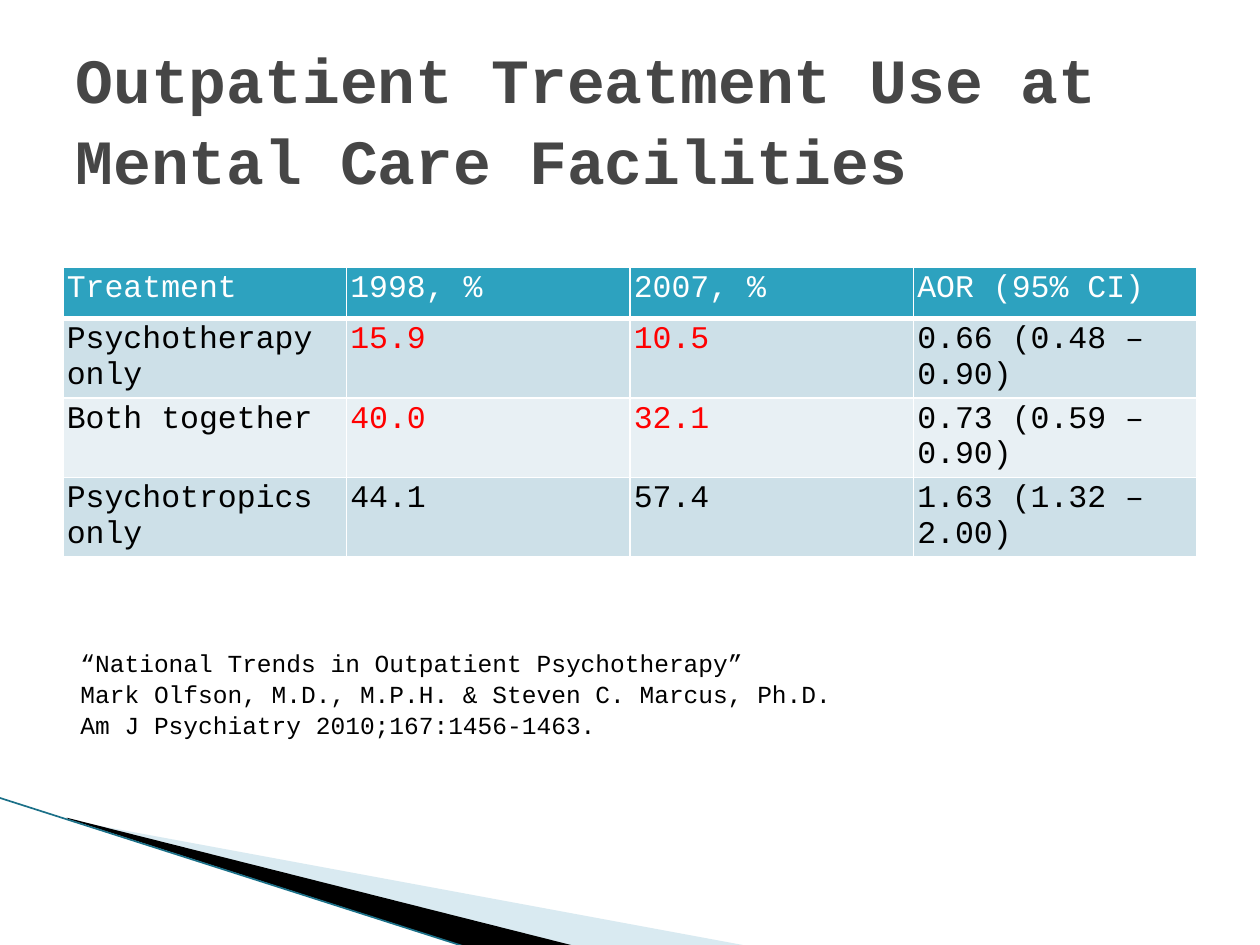
from lxml.etree import SubElement as Sub
from pptx import Presentation
from pptx.dml.color import RGBColor as RGB
from pptx.enum.shapes import MSO_CONNECTOR as Conn
from pptx.enum.text import MSO_ANCHOR as Anchor, MSO_AUTO_SIZE as Fit, PP_ALIGN as Align
from pptx.oxml.ns import qn
from pptx.util import Pt

PX = 9144  # 100 px to the inch
FACE = "Courier New"
WHITE = RGB(0xFF, 0xFF, 0xFF)
BLACK = RGB(0, 0, 0)
RED = RGB(0xFF, 0, 0)
GREY = RGB(0x46, 0x46, 0x46)
TEAL = RGB(0x2D, 0xA2, 0xBF)
DEEP = RGB(0x1B, 0x70, 0x88)
PALE = RGB(0xA0, 0xCB, 0xDC)
BAND = RGB(0xCD, 0xE0, 0xE8)
LIGHT = RGB(0xE8, 0xF0, 0xF4)

ROWS = [
    ["Treatment", "1998, %", "2007, %", "AOR (95% CI)"],
    ["Psychotherapy only", "15.9", "10.5", "0.66 (0.48 – 0.90)"],
    ["Both together", "40.0", "32.1", "0.73 (0.59 – 0.90)"],
    ["Psychotropics only", "44.1", "57.4", "1.63 (1.32 – 2.00)"],
]
FALLS = {"15.9", "10.5", "40.0", "32.1"}
CITE = [
    "“National Trends in Outpatient Psychotherapy”",
    "Mark Olfson, M.D., M.P.H. & Steven C. Marcus, Ph.D.",
    "Am J Psychiatry 2010;167:1456-1463.",
]


def emu(*vals):
    return [val * PX for val in vals]


def put(item, **vals):
    for key, val in vals.items():
        setattr(item, key, val)


class Deck:
    def __init__(self, wide, high):
        self.prs = Presentation()
        put(self.prs, slide_width=wide * PX, slide_height=high * PX)
        self.slide = self.prs.slides.add_slide(self.prs.slide_layouts[5])
        self.shapes = self.slide.shapes

    def words(self, frame, lines, size, color, bold=False, gap=None):
        frame.word_wrap = True
        for num, line in enumerate(lines):
            para = frame.add_paragraph() if num else frame.paragraphs[0]
            put(para, alignment=Align.LEFT, line_spacing=gap)
            run = para.add_run()
            run.text = line
            put(run.font, name=FACE, size=Pt(size), bold=bold)
            run.font.color.rgb = color

    def title(self, text, box):
        shape = self.shapes.title
        put(shape, **dict(zip(("left", "top", "width", "height"), emu(*box))))
        put(shape.text_frame, vertical_anchor=Anchor.MIDDLE, auto_size=Fit.NONE)
        self.words(shape.text_frame, [text], 36, GREY, True, 1.06)

    def note(self, lines, box):
        frame = self.shapes.add_textbox(*emu(*box)).text_frame
        self.words(frame, lines, 14, BLACK, gap=1.06)
        frame.auto_size = Fit.SHAPE_TO_FIT_TEXT

    def wedge(self, points, color, alpha=None):
        """Draw a filled outline; alpha is its opacity in percent."""
        pen = self.shapes.build_freeform(*points[0], scale=PX)
        pen.add_line_segments(points[1:], close=True)
        shape = pen.convert_to_shape()
        shape.shadow.inherit = False
        shape.fill.solid()
        shape.fill.fore_color.rgb = color
        shape.line.fill.background()
        if alpha:
            tint = shape.fill._xPr.find(".//" + qn("a:srgbClr"))
            Sub(tint, qn("a:alpha"), val=str(alpha * 1000))

    def line(self, start, end, color, width):
        link = self.shapes.add_connector(Conn.STRAIGHT, *emu(*start, *end))
        link.line.color.rgb = color
        link.line.width = Pt(width)
        Sub(link._element.spPr, qn("a:effectLst"))

    def edge(self, cell, base):
        """Give a cell white borders, with its own width at the base."""
        props = cell._tc.get_or_add_tcPr()
        sides = {"a:lnL": 1, "a:lnR": 1, "a:lnT": 1, "a:lnB": base}
        for spot, (tag, width) in enumerate(sides.items()):
            rule = Sub(props, qn(tag), w=str(Pt(width)))
            Sub(Sub(rule, qn("a:solidFill")), qn("a:srgbClr"), val=str(WHITE))
            props.insert(spot, rule)

    def table(self, rows, box, heights):
        grid = self.shapes.add_table(len(rows), len(rows[0]), *emu(*box)).table
        for row, high in zip(grid.rows, heights):
            row.height = high * PX
        sides = ("left", "top", "right", "bottom")
        inset = {"margin_" + side: 3 * PX for side in sides}
        for r, row in enumerate(rows):
            for c, text in enumerate(row):
                cell = grid.cell(r, c)
                put(cell, **inset)
                cell.fill.solid()
                cell.fill.fore_color.rgb = (BAND if r % 2 else LIGHT) if r else TEAL
                self.edge(cell, 1 if r else 3)
                ink = RED if text in FALLS else BLACK
                self.words(cell.text_frame, [text], 18, ink if r else WHITE)


def main():
    deck = Deck(1000, 750)
    deck.wedge([(55, 651), (595, 751), (456, 751), (55, 650)], PALE, 40)
    deck.wedge([(53, 649), (457, 751), (372, 752), (54, 650)], BLACK)
    deck.line((-1, 633), (371, 752), DEEP, 0.95)
    deck.title("Outpatient Treatment Use at Mental Care Facilities", (50, 30, 900, 125))
    deck.table(ROWS, (50, 212, 900, 230), [41, 63, 63, 63])
    deck.note(CITE, (54, 508, 892, 81))
    deck.prs.save("out.pptx")


if __name__ == "__main__":
    main()
